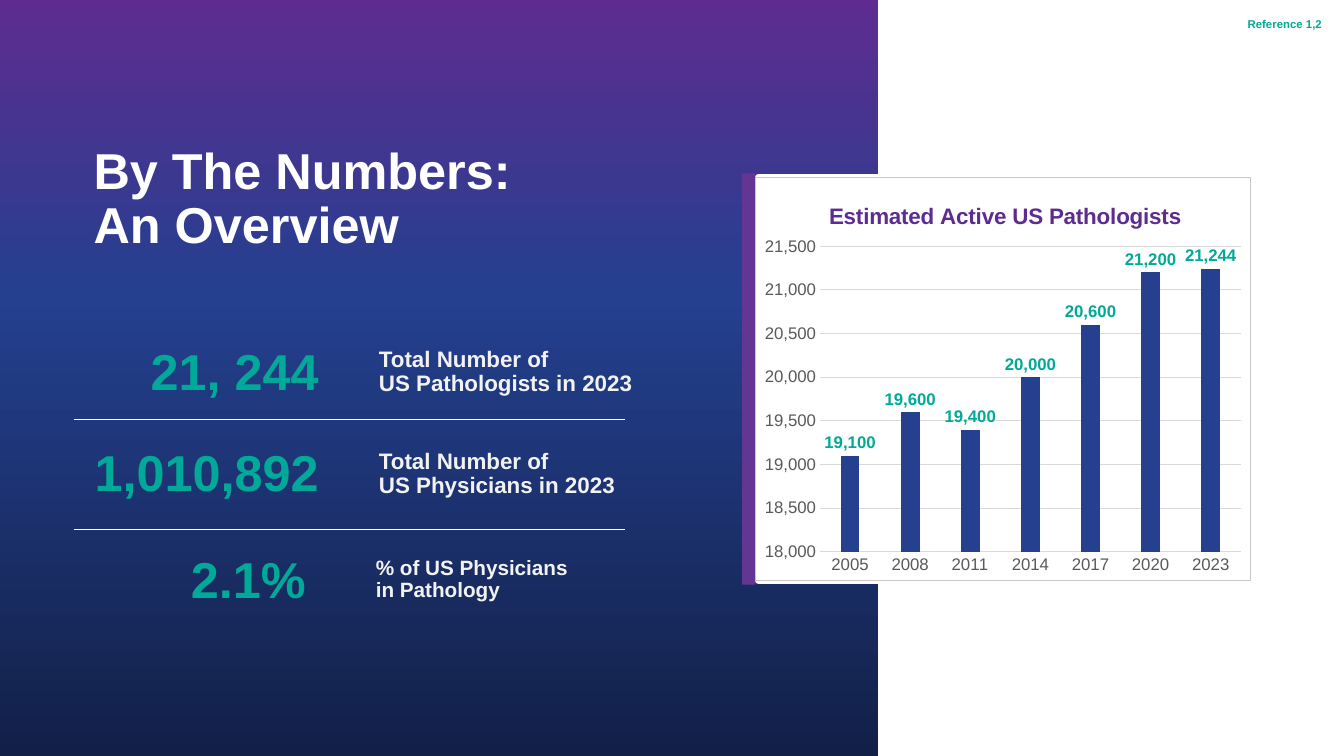
from dataclasses import dataclass

from lxml import etree
from pptx import Presentation
from pptx.chart.data import CategoryChartData
from pptx.dml.color import RGBColor
from pptx.enum.chart import XL_CHART_TYPE, XL_LABEL_POSITION, XL_TICK_MARK
from pptx.enum.shapes import MSO_CONNECTOR, MSO_SHAPE
from pptx.enum.text import MSO_ANCHOR, MSO_AUTO_SIZE, PP_ALIGN
from pptx.oxml import parse_xml
from pptx.oxml.ns import nsdecls, qn
from pptx.util import Inches, Pt

COLUMNS = XL_CHART_TYPE.COLUMN_CLUSTERED
OUTSIDE_END = XL_LABEL_POSITION.OUTSIDE_END
NO_TICK = XL_TICK_MARK.NONE
STRAIGHT = MSO_CONNECTOR.STRAIGHT
RECTANGLE = MSO_SHAPE.RECTANGLE
TOP, MIDDLE = MSO_ANCHOR.TOP, MSO_ANCHOR.MIDDLE
FIT_SHAPE, FIXED = MSO_AUTO_SIZE.SHAPE_TO_FIT_TEXT, MSO_AUTO_SIZE.NONE
LEFT, RIGHT = PP_ALIGN.LEFT, PP_ALIGN.RIGHT

FONT = "Arial"
COLORS = {
    "white": "FFFFFF", "purple": "5E2C91", "accent": "643694", "blue": "24408F",
    "navy": "122048", "teal": "00A998", "pale": "F2F2F2", "axis": "595959",
    "grid": "D9D9D9", "border": "C7C7C7",
}


@dataclass
class Box:
    left: float
    top: float
    width: float
    height: float

    def emu(self) -> tuple:
        return tuple(Inches(v) for v in (self.left, self.top, self.width, self.height))


@dataclass
class Stat:
    number: str
    number_box: Box
    label: str
    label_box: Box
    label_size: float = 16


STATS = [
    Stat("21, 244", Box(0.71, 3.32, 2.55, 0.71),
         "Total Number of\vUS Pathologists in 2023", Box(3.66, 3.4, 3.21, 0.58)),
    Stat("1,010,892", Box(0.71, 4.33, 2.55, 0.71),
         "Total Number of\vUS Physicians in 2023", Box(3.66, 4.42, 3.21, 0.58)),
    Stat("2.1%", Box(1.09, 5.39, 2.04, 0.71),
         "% of US Physicians in Pathology", Box(3.63, 5.48, 2.23, 0.58), 14.8),
]
DIVIDER_TOPS = [4.16, 5.25]
PATHOLOGISTS = {
    "2005": 19100, "2008": 19600, "2011": 19400, "2014": 20000,
    "2017": 20600, "2020": 21200, "2023": 21244,
}


def rgb(name: str) -> RGBColor:
    return RGBColor.from_string(COLORS[name])


def style_font(font, size: float, color: str, bold: bool = False) -> None:
    font.name = FONT
    font.size = Pt(size)
    font.bold = bold
    font.color.rgb = rgb(color)


def add_rectangle(slide, box: Box, color: str):
    rectangle = slide.shapes.add_shape(RECTANGLE, *box.emu())
    rectangle.shadow.inherit = False
    rectangle.fill.solid()
    rectangle.fill.fore_color.rgb = rgb(color)
    rectangle.line.fill.background()
    return rectangle


def fill_gradient(shape, stops: list[tuple[int, str]]) -> None:
    shape.fill.gradient()
    shape.fill.gradient_angle = 270
    stop_list = shape._element.spPr.find(qn("a:gradFill")).find(qn("a:gsLst"))
    for old_stop in list(stop_list):
        stop_list.remove(old_stop)
    for percent, color in stops:
        stop = etree.SubElement(stop_list, qn("a:gs"), pos=str(percent * 1000))
        etree.SubElement(stop, qn("a:srgbClr"), val=COLORS[color])


def add_text(slide, box: Box, text: str, size: float, color: str, align=LEFT,
             anchor=TOP, spacing: float = 0.9, auto_size=FIXED):
    frame = slide.shapes.add_textbox(*box.emu()).text_frame
    frame.word_wrap = True
    frame.auto_size = auto_size
    frame.vertical_anchor = anchor
    paragraph = frame.paragraphs[0]
    paragraph.text = text
    paragraph.alignment = align
    paragraph.line_spacing = spacing
    style_font(paragraph.font, size, color, bold=True)
    return paragraph


def add_divider(slide, top: float) -> None:
    divider = slide.shapes.add_connector(
        STRAIGHT, Inches(0.73), Inches(top), Inches(6.2), Inches(top))
    divider.line.color.rgb = rgb("white")
    divider.line.width = Pt(1)
    etree.SubElement(divider._element.spPr, qn("a:effectLst"))


def place_chart_part(part, index: int, **fractions: float) -> None:
    """Put a manual layout, in fractions of the chart, at the given child index."""
    for old_layout in part.findall(qn("c:layout")):
        part.remove(old_layout)
    layout = etree.Element(qn("c:layout"))
    manual = etree.SubElement(layout, qn("c:manualLayout"))
    if "w" in fractions:
        etree.SubElement(manual, qn("c:layoutTarget"), val="inner")
    for mode in ("xMode", "yMode"):
        etree.SubElement(manual, qn(f"c:{mode}"), val="edge")
    for key, value in fractions.items():
        etree.SubElement(manual, qn(f"c:{key}"), val=str(value))
    part.insert(index, layout)


def add_pathologist_chart(slide, box: Box) -> None:
    data = CategoryChartData(number_format="#,##0")
    data.categories = list(PATHOLOGISTS)
    data.add_series("Series 1", list(PATHOLOGISTS.values()))
    chart = slide.shapes.add_chart(COLUMNS, *box.emu(), data).chart
    chart.has_legend = False
    chart.font.name = FONT
    chart.font.size = Pt(10)

    # Title
    chart.has_title = True
    title = chart.chart_title.text_frame.paragraphs[0]
    title.text = "Estimated Active US Pathologists"
    style_font(title.font, 16, "purple", bold=True)
    place_chart_part(chart.chart_title._element, 1, x=0.14, y=0.05)

    # Axes
    for axis in (chart.category_axis, chart.value_axis):
        axis.major_tick_mark = axis.minor_tick_mark = NO_TICK
        style_font(axis.tick_labels.font, 12, "axis")
    values = chart.value_axis
    values.minimum_scale, values.maximum_scale, values.major_unit = 18000, 21500, 500
    values.tick_labels.number_format = "#,##0"
    values.tick_labels.number_format_is_linked = False
    values.format.line.fill.background()
    for line in (chart.category_axis.format.line, values.major_gridlines.format.line):
        line.color.rgb = rgb("grid")
        line.width = Pt(0.75)

    # Columns and their labels
    plot = chart.plots[0]
    plot.vary_by_categories = False
    plot.gap_width, plot.overlap = 219, -27
    columns = plot.series[0]
    columns.format.fill.solid()
    columns.format.fill.fore_color.rgb = rgb("blue")
    labels = columns.data_labels
    labels.show_value = True
    labels.position = OUTSIDE_END
    style_font(labels.font, 12, "teal", bold=True)

    # Plot position, background and border
    space = chart._chartSpace
    place_chart_part(space.chart.plotArea, 0, x=0.13, y=0.17, w=0.85, h=0.76)
    space.chart.addnext(parse_xml(
        f'<c:spPr {nsdecls("c", "a")}>'
        f'<a:solidFill><a:srgbClr val="{COLORS["white"]}"/></a:solidFill>'
        f'<a:ln w="{Pt(0.75)}"><a:solidFill><a:srgbClr val="{COLORS["border"]}"/>'
        '</a:solidFill></a:ln></c:spPr>'))


def main() -> None:
    deck = Presentation()
    deck.slide_width, deck.slide_height = Inches(13.33), Inches(7.5)
    slide = deck.slides.add_slide(deck.slide_layouts[6])

    # Backdrop
    panel = add_rectangle(slide, Box(0, 0, 8.71, 7.5), "blue")
    fill_gradient(panel, [(0, "purple"), (39, "blue"), (100, "navy")])
    card = add_rectangle(slide, Box(7.52, 1.76, 3.99, 4), "white")
    card.line.color.rgb = rgb("white")
    card.line.width = Pt(5)
    add_rectangle(slide, Box(7.36, 1.72, 0.13, 4.08), "accent")

    # Heading and chart
    add_text(slide, Box(0.83, 1.26, 5.38, 1.45), "By The Numbers:\vAn Overview",
             36, "white", anchor=MIDDLE)
    add_pathologist_chart(slide, Box(7.49, 1.76, 4.92, 4))

    # Key figures
    for stat in STATS:
        add_text(slide, stat.number_box, stat.number, 36, "teal", align=RIGHT,
                 spacing=1.0, auto_size=FIT_SHAPE)
        add_text(slide, stat.label_box, stat.label, stat.label_size, "pale")
    for top in DIVIDER_TOPS:
        add_divider(slide, top)

    # Superscript reference
    reference = add_text(slide, Box(11.21, 0.12, 2, 0.28), "Reference 1,2",
                         14, "teal", align=RIGHT)
    reference.runs[0]._r.get_or_add_rPr().set("baseline", "30000")

    deck.save("out.pptx")


if __name__ == "__main__":
    main()
